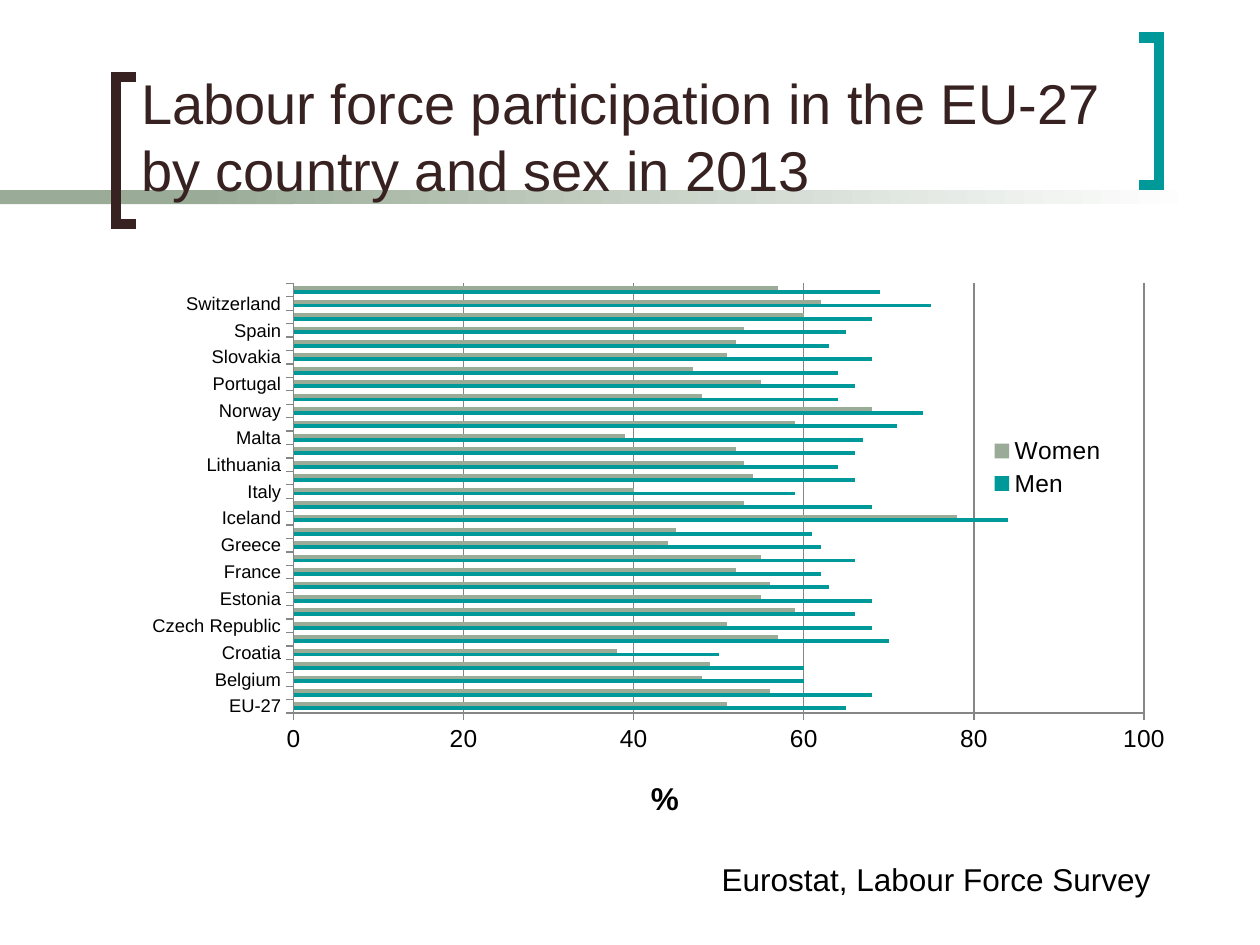
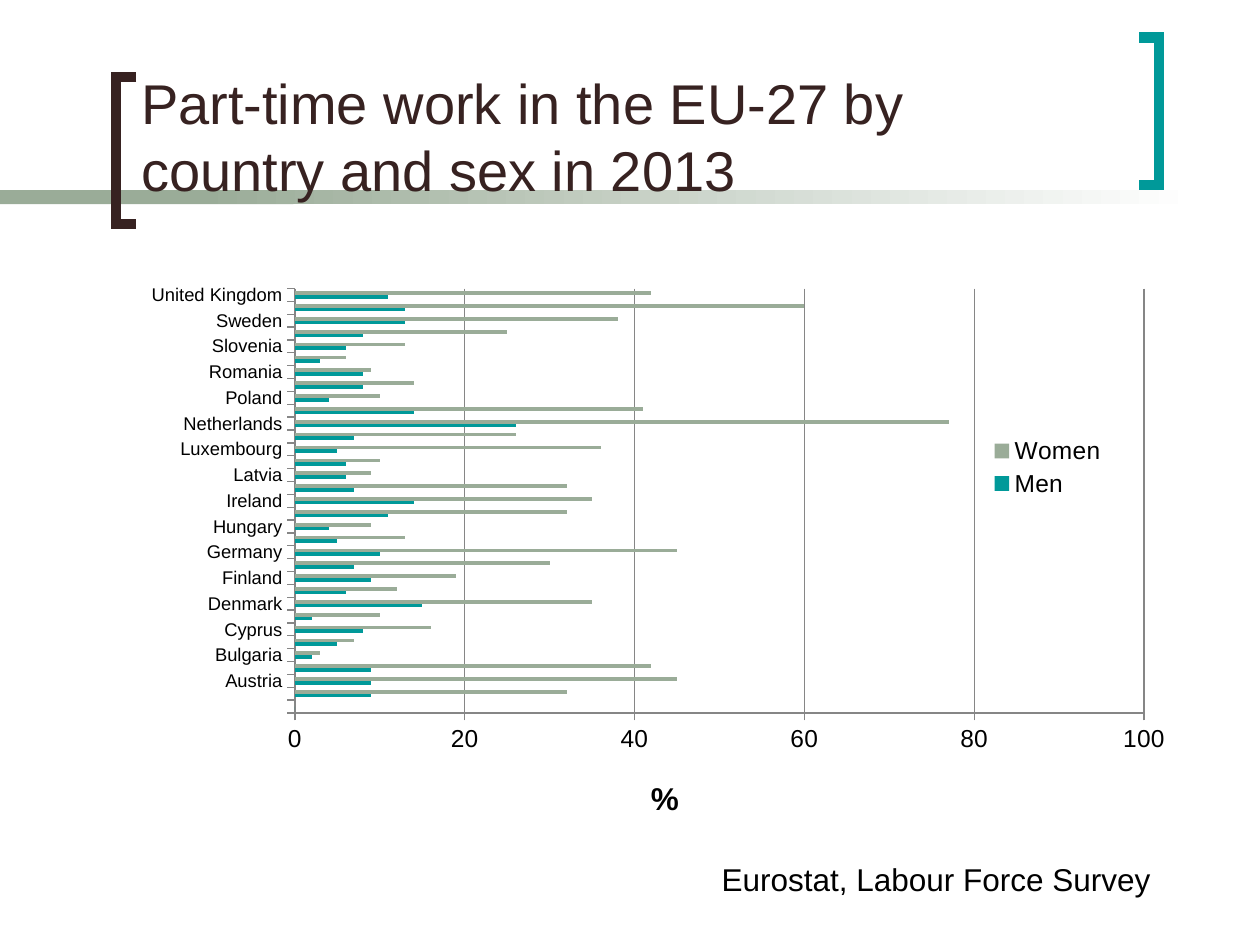
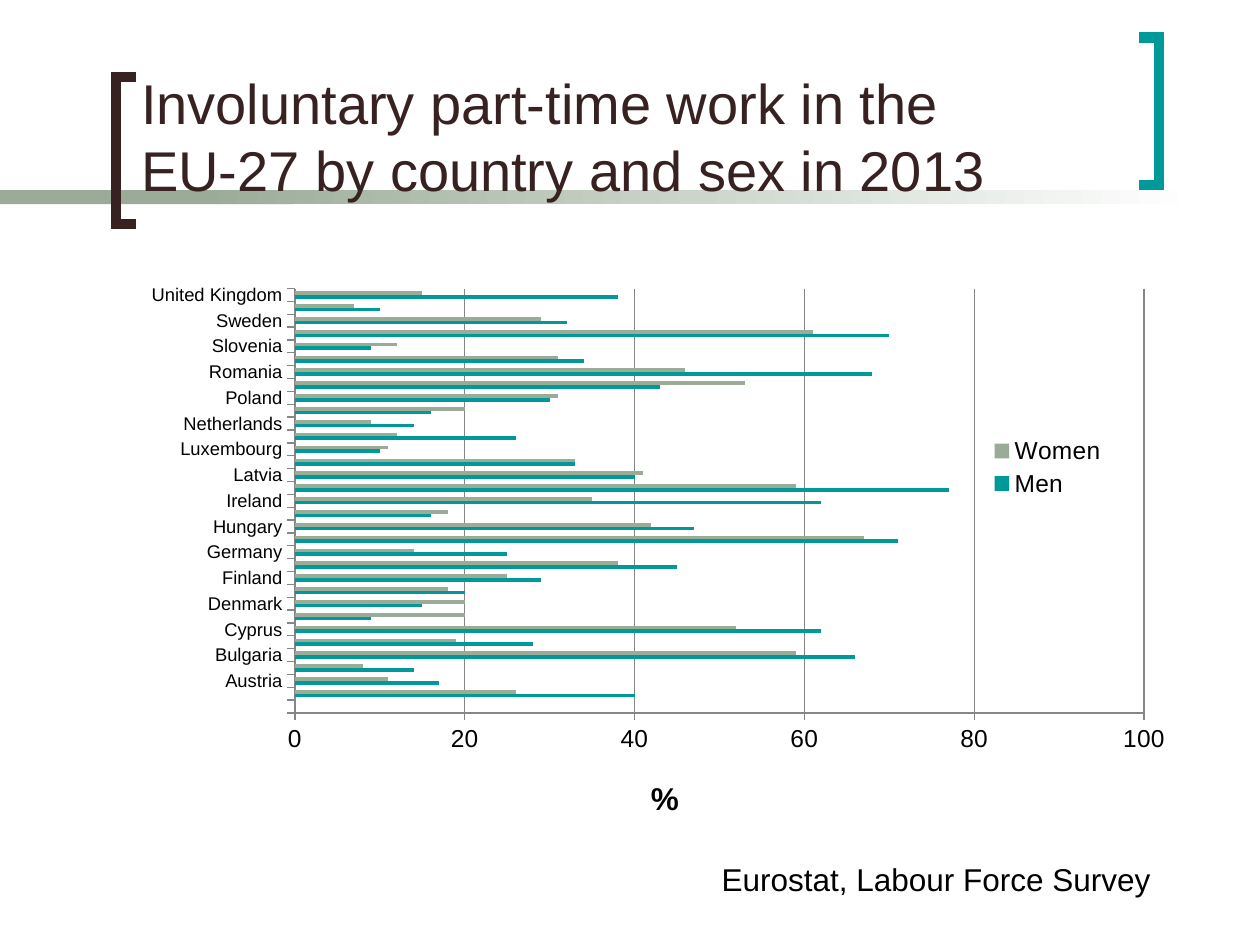
from dataclasses import dataclass

from lxml.etree import SubElement
from pptx import Presentation
from pptx.chart.data import CategoryChartData
from pptx.dml.color import RGBColor
from pptx.enum.chart import XL_CHART_TYPE, XL_LEGEND_POSITION, XL_TICK_MARK
from pptx.enum.shapes import MSO_SHAPE
from pptx.enum.text import MSO_ANCHOR, MSO_AUTO_SIZE, PP_ALIGN
from pptx.oxml import parse_xml
from pptx.oxml.ns import nsdecls, qn
from pptx.util import Inches, Pt


@dataclass(frozen=True)
class Theme:
    font: str = "Arial"
    black: RGBColor = RGBColor.from_string("000000")
    white: RGBColor = RGBColor.from_string("FFFFFF")
    brown: RGBColor = RGBColor.from_string("372221")
    teal: RGBColor = RGBColor.from_string("009999")
    sage: RGBColor = RGBColor.from_string("9AAC98")
    grid: RGBColor = RGBColor.from_string("868686")
    title_size: int = 32
    body_size: int = 18
    value_size: int = 14
    category_size: float = 10.5
    bracket_width: int = 6
    grid_width: float = 0.75


CHART_BOX = (1.04, 2.17, 8.38, 4.5)
PLOT_RIGHT, PLOT_BOTTOM = 9.08, 5.66
SOURCE = "Eurostat, Labour Force Survey"

COUNTRIES = [
    "EU-27", "Austria", "Belgium", "Bulgaria", "Croatia", "Cyprus", "Czech Republic",
    "Denmark", "Estonia", "Finland", "France", "Germany", "Greece", "Hungary",
    "Iceland", "Ireland", "Italy", "Latvia", "Lithuania", "Luxembourg", "Malta",
    "Netherlands", "Norway", "Poland", "Portugal", "Romania", "Slovakia", "Slovenia",
    "Spain", "Sweden", "Switzerland", "United Kingdom",
]

SLIDES = [
    {
        "title": "Labour force participation in the EU-27 by country and sex in 2013",
        "categories": COUNTRIES,
        "men": [65, 68, 60, 60, 50, 70, 68, 66, 68, 63, 62, 66, 62, 61, 84, 68,
                59, 66, 64, 66, 67, 71, 74, 64, 66, 64, 68, 63, 65, 68, 75, 69],
        "women": [51, 56, 48, 49, 38, 57, 51, 59, 55, 56, 52, 55, 44, 45, 78, 53,
                  40, 54, 53, 52, 39, 59, 68, 48, 55, 47, 51, 52, 53, 60, 62, 57],
        "plot_left": 2.33,
        "plot_top": 2.25,
    },
    {
        "title": "Part-time work in the EU-27 by country and sex in 2013",
        "categories": ["", *COUNTRIES],
        "men": [0, 9, 9, 9, 2, 5, 8, 2, 15, 6, 9, 7, 10, 5, 4, 11, 14,
                7, 6, 6, 5, 7, 26, 14, 4, 8, 8, 3, 6, 8, 13, 13, 11],
        "women": [0, 32, 45, 42, 3, 7, 16, 10, 35, 12, 19, 30, 45, 13, 9, 32, 35,
                  32, 9, 10, 36, 26, 77, 41, 10, 14, 9, 6, 13, 25, 38, 60, 42],
        "plot_left": 2.34,
        "plot_top": 2.29,
    },
    {
        "title": "Involuntary part-time work in the EU-27 by country and sex in 2013",
        "categories": ["", *COUNTRIES],
        "men": [0, 40, 17, 14, 66, 28, 62, 9, 15, 20, 29, 45, 25, 71, 47, 16, 62,
                77, 40, 33, 10, 26, 14, 16, 30, 43, 68, 34, 9, 70, 32, 10, 38],
        "women": [0, 26, 11, 8, 59, 19, 52, 20, 20, 18, 25, 38, 14, 67, 42, 18, 35,
                  59, 41, 33, 11, 12, 9, 20, 31, 53, 46, 31, 12, 61, 29, 7, 15],
        "plot_left": 2.34,
        "plot_top": 2.29,
    },
]


def format_font(font, theme, size, color=None, bold=False):
    font.name = theme.font
    font.size = Pt(size)
    font.bold = bold
    font.color.rgb = theme.black if color is None else color


def write_text(text_frame, text, theme, size, color=None, bold=False, align=PP_ALIGN.LEFT):
    paragraph = text_frame.paragraphs[0]
    paragraph.alignment = align
    run = paragraph.add_run()
    run.text = text
    format_font(run.font, theme, size, color, bold)


def place_in_chart(part, left, top, width=None, height=None):
    """Fix a chart part at slide coordinates in inches; a size marks the inner plot."""
    for old_layout in part.findall(qn("c:layout")):
        part.remove(old_layout)
    layout = parse_xml(f"<c:layout {nsdecls('c')}><c:manualLayout/></c:layout>")
    chart_left, chart_top, chart_width, chart_height = CHART_BOX
    settings = {"xMode": "edge", "yMode": "edge",
                "x": (left - chart_left) / chart_width,
                "y": (top - chart_top) / chart_height}
    if width is not None:
        settings = {"layoutTarget": "inner", **settings,
                    "w": width / chart_width, "h": height / chart_height}
    for name, value in settings.items():
        SubElement(layout[0], qn(f"c:{name}")).set("val", str(value))
    overlay = part.find(qn("c:overlay"))
    if overlay is None:
        part.insert(0, layout)
    else:
        overlay.addprevious(layout)


class Deck:
    def __init__(self, theme):
        self.theme = theme
        self.presentation = Presentation()
        self.presentation.slide_width = Inches(10)
        self.presentation.slide_height = Inches(7.5)
        self.slide = None

    def add_slide(self, title):
        layout = self.presentation.slide_layouts.get_by_name("Title Only")
        self.slide = self.presentation.slides.add_slide(layout)
        self.band(0, 2.33)
        self.band(1.58, 7.92, fades=True)
        self.bracket(1.08, 0.92, 0.61, self.theme.brown)
        self.bracket(9.04, 9.2, 0.3, self.theme.teal)
        self.title(title)

    def band(self, left, width, fades=False):
        shape = self.slide.shapes.add_shape(
            MSO_SHAPE.RECTANGLE, Inches(left), Inches(1.51), Inches(width), Inches(0.11))
        shape.shadow.inherit = False
        shape.line.fill.background()
        if fades:
            shape.fill.gradient()
            shape.fill.gradient_angle = 0
            colors = (self.theme.sage, self.theme.white)
            for position, (stop, color) in enumerate(zip(shape.fill.gradient_stops, colors)):
                stop.position = position
                stop.color.rgb = color
        else:
            shape.fill.solid()
            shape.fill.fore_color.rgb = self.theme.sage

    def bracket(self, tip, spine, top, color):
        bottom = top + 1.17
        builder = self.slide.shapes.build_freeform(Inches(tip), Inches(top))
        corners = [(spine, top), (spine, bottom), (tip, bottom)]
        builder.add_line_segments([(Inches(x), Inches(y)) for x, y in corners], close=False)
        shape = builder.convert_to_shape()
        shape.shadow.inherit = False
        shape.fill.background()
        shape.line.color.rgb = color
        shape.line.width = Pt(self.theme.bracket_width)
        outline = shape.element.spPr.find(qn("a:ln"))
        SubElement(outline, qn("a:miter")).set("lim", "800000")

    def title(self, text):
        """Fill the title placeholder and lift it above the bands."""
        shape = self.slide.shapes.title
        self.slide.shapes.element.append(shape.element)
        shape.left, shape.top = Inches(1.02), Inches(0.11)
        shape.width, shape.height = Inches(7.83), Inches(1.55)
        text_frame = shape.text_frame
        text_frame.word_wrap = True
        text_frame.auto_size = MSO_AUTO_SIZE.NONE
        text_frame.vertical_anchor = MSO_ANCHOR.BOTTOM
        write_text(text_frame, text, self.theme, self.theme.title_size, self.theme.brown)

    def bar_chart(self, categories, men, women, plot_left, plot_top):
        theme = self.theme
        chart_data = CategoryChartData()
        chart_data.categories = categories
        chart_data.add_series("Men", men)
        chart_data.add_series("Women", women)
        chart = self.slide.shapes.add_chart(
            XL_CHART_TYPE.BAR_CLUSTERED, *map(Inches, CHART_BOX), chart_data).chart
        format_font(chart.font, theme, theme.body_size)
        chart.has_title = False

        plot = chart.plots[0]
        plot.gap_width = 150
        plot.overlap = 0
        plot.vary_by_categories = False
        for series, color in zip(plot.series, (theme.teal, theme.sage)):
            series.format.fill.solid()
            series.format.fill.fore_color.rgb = color

        value_axis = chart.value_axis
        value_axis.minimum_scale, value_axis.maximum_scale = 0, 100
        value_axis.major_unit = 20
        value_axis.has_major_gridlines = True
        value_axis.tick_labels.number_format = "General"
        value_axis.tick_labels.number_format_is_linked = False
        write_text(value_axis.axis_title.text_frame, "%", theme, theme.body_size,
                   bold=True, align=PP_ALIGN.CENTER)
        axis_sizes = ((chart.category_axis, theme.category_size), (value_axis, theme.value_size))
        for axis, size in axis_sizes:
            axis.major_tick_mark = XL_TICK_MARK.OUTSIDE
            format_font(axis.tick_labels.font, theme, size)
        for lined in (chart.category_axis, value_axis, value_axis.major_gridlines):
            lined.format.line.color.rgb = theme.grid
            lined.format.line.width = Pt(theme.grid_width)

        chart.has_legend = True
        chart.legend.position = XL_LEGEND_POSITION.RIGHT
        chart.legend.include_in_layout = True
        format_font(chart.legend.font, theme, theme.value_size)

        plot_area, legend, axis_title = (
            chart.element.xpath(f".//c:{name}")[0]
            for name in ("plotArea", "legend", "valAx/c:title"))
        place_in_chart(plot_area, plot_left, plot_top,
                       PLOT_RIGHT - plot_left, PLOT_BOTTOM - plot_top)
        place_in_chart(legend, 7.83, 3.43)
        place_in_chart(axis_title, 5.12, 6.13)

    def source_note(self, text):
        shape = self.slide.shapes.add_textbox(
            Inches(5.63), Inches(6.78), Inches(3.64), Inches(0.4))
        shape.text_frame.word_wrap = False
        shape.text_frame.auto_size = MSO_AUTO_SIZE.SHAPE_TO_FIT_TEXT
        write_text(shape.text_frame, text, self.theme, self.theme.body_size)


def main():
    deck = Deck(Theme())
    for content in SLIDES:
        chart_content = dict(content)
        deck.add_slide(chart_content.pop("title"))
        deck.bar_chart(**chart_content)
        deck.source_note(SOURCE)
    deck.presentation.save("out.pptx")


if __name__ == "__main__":
    main()
